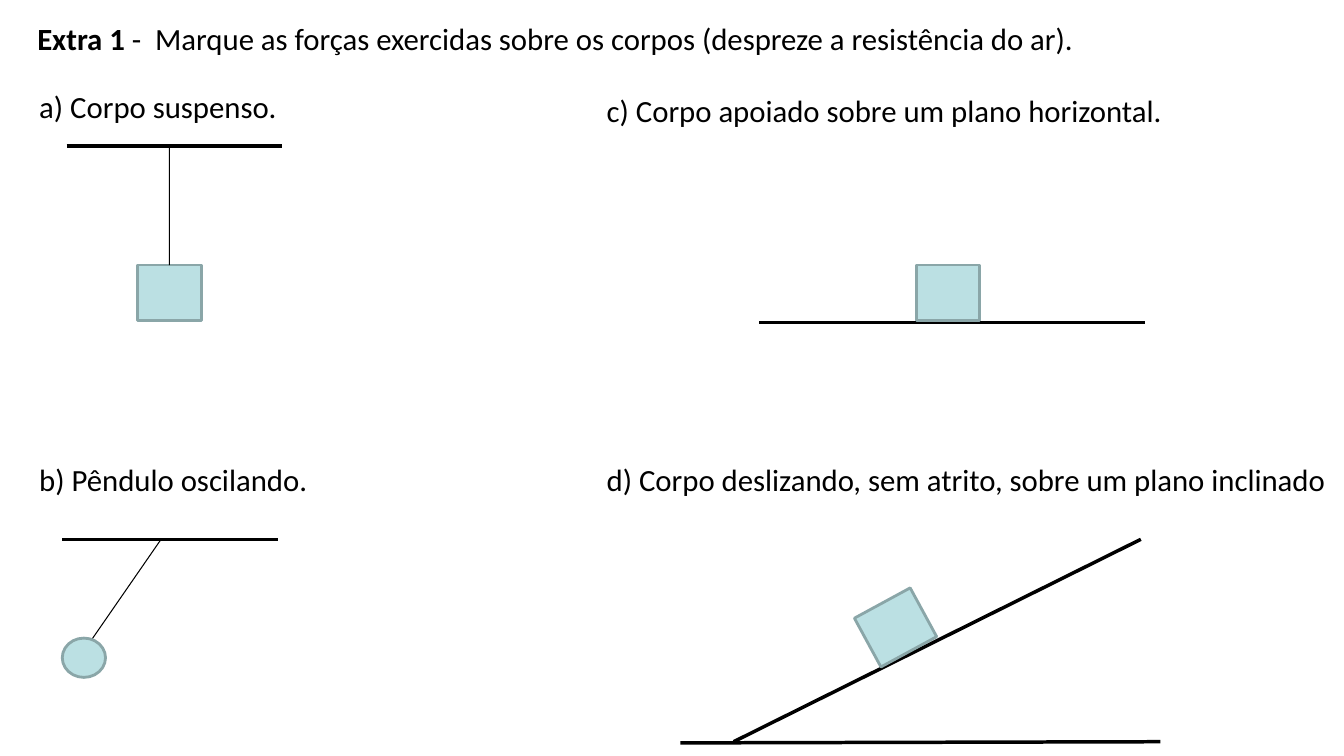
from lxml import etree
from pptx import Presentation
from pptx.dml.color import RGBColor
from pptx.enum.shapes import MSO_CONNECTOR, MSO_SHAPE
from pptx.enum.text import MSO_AUTO_SIZE
from pptx.oxml.ns import qn
from pptx.util import Cm, Pt

STRAIGHT = MSO_CONNECTOR.STRAIGHT
RECTANGLE = MSO_SHAPE.RECTANGLE
OVAL = MSO_SHAPE.OVAL
FIT_SHAPE = MSO_AUTO_SIZE.SHAPE_TO_FIT_TEXT

COLOURS = {"ink": "000000", "body": "BBE0E3", "edge": "8AA6A8"}
FONT = "Calibri"
TOP = 0
SURFACE = 2.5
STRING = 0.75
BLOCK_SIZE = (1.6, 1.4)
BALL_SIZE = (1.09, 0.99)


def colour(name):
    return RGBColor.from_string(COLOURS[name])


def add_span(para, text, size=22, bold=False, ink="ink"):
    span = para.add_run()
    span.text = text
    span.font.name = FONT
    span.font.size = Pt(size)
    span.font.bold = bold
    span.font.color.rgb = colour(ink)


def add_label(page, text, left, top, width, lead="", wrap=False):
    box = page.shapes.add_textbox(Cm(left), Cm(top), Cm(width), Cm(1.2))
    frame = box.text_frame
    frame.word_wrap = wrap
    frame.auto_size = FIT_SHAPE
    para = frame.paragraphs[0]
    if lead:
        add_span(para, lead, bold=True)
    add_span(para, text)


def add_line(page, start, end, weight):
    line = page.shapes.add_connector(STRAIGHT, *map(Cm, start + end))
    line.line.color.rgb = colour("ink")
    line.line.width = Pt(weight)
    etree.SubElement(line._element.spPr, qn("a:effectLst"))
    return line


def add_body(page, kind, left, top, size, rotation=0):
    body = page.shapes.add_shape(kind, Cm(left), Cm(top), *map(Cm, size))
    body.shadow.inherit = False
    body.rotation = rotation
    body.fill.solid()
    body.fill.fore_color.rgb = colour("body")
    body.line.color.rgb = colour("edge")
    body.line.width = Pt(2)
    return body


def draw_suspended_body(page):
    add_label(page, "a) Corpo suspenso.", 0.74, 2.08, 6.55)
    add_line(page, (1.68, 3.68), (7.11, 3.68), SURFACE)
    block = add_body(page, RECTANGLE, 3.47, 6.68, BLOCK_SIZE)
    string = add_line(page, (4.27, 3.68), (4.27, 6.68), STRING)
    string.end_connect(block, TOP)


def draw_pendulum(page):
    add_label(page, "b) Pêndulo oscilando.", 0.74, 11.48, 7.34)
    add_line(page, (1.57, 13.59), (7.01, 13.59), SURFACE)
    add_line(page, (4.06, 13.59), (2.06, 16.48), STRING)
    add_body(page, OVAL, 1.57, 16.08, BALL_SIZE)


def draw_horizontal_plane(page):
    add_label(page, "c) Corpo apoiado sobre um plano horizontal.", 15.04, 2.18, 14.63)
    add_line(page, (19.13, 8.13), (28.85, 8.13), SURFACE)
    add_body(page, RECTANGLE, 23.09, 6.68, BLOCK_SIZE)


def draw_inclined_plane(page):
    add_label(page, "d) Corpo deslizando, sem atrito, sobre um plano inclinado",
              15.04, 11.48, 18.85, wrap=True)
    add_line(page, (18.49, 18.69), (28.75, 13.59), SURFACE)
    add_line(page, (17.15, 18.72), (29.24, 18.69), SURFACE)
    add_body(page, RECTANGLE, 21.77, 15.11, BLOCK_SIZE, rotation=331.5)


def main():
    deck = Presentation()
    deck.slide_width = Cm(33.87)
    deck.slide_height = Cm(19.05)
    page = deck.slides.add_slide(deck.slide_layouts[6])
    add_label(page, "-  Marque as forças exercidas sobre os corpos (despreze a resistência do ar).",
              0.69, 0.36, 26.75, lead="Extra 1 ")
    draw_suspended_body(page)
    draw_pendulum(page)
    draw_horizontal_plane(page)
    draw_inclined_plane(page)
    deck.save("out.pptx")


if __name__ == "__main__":
    main()
